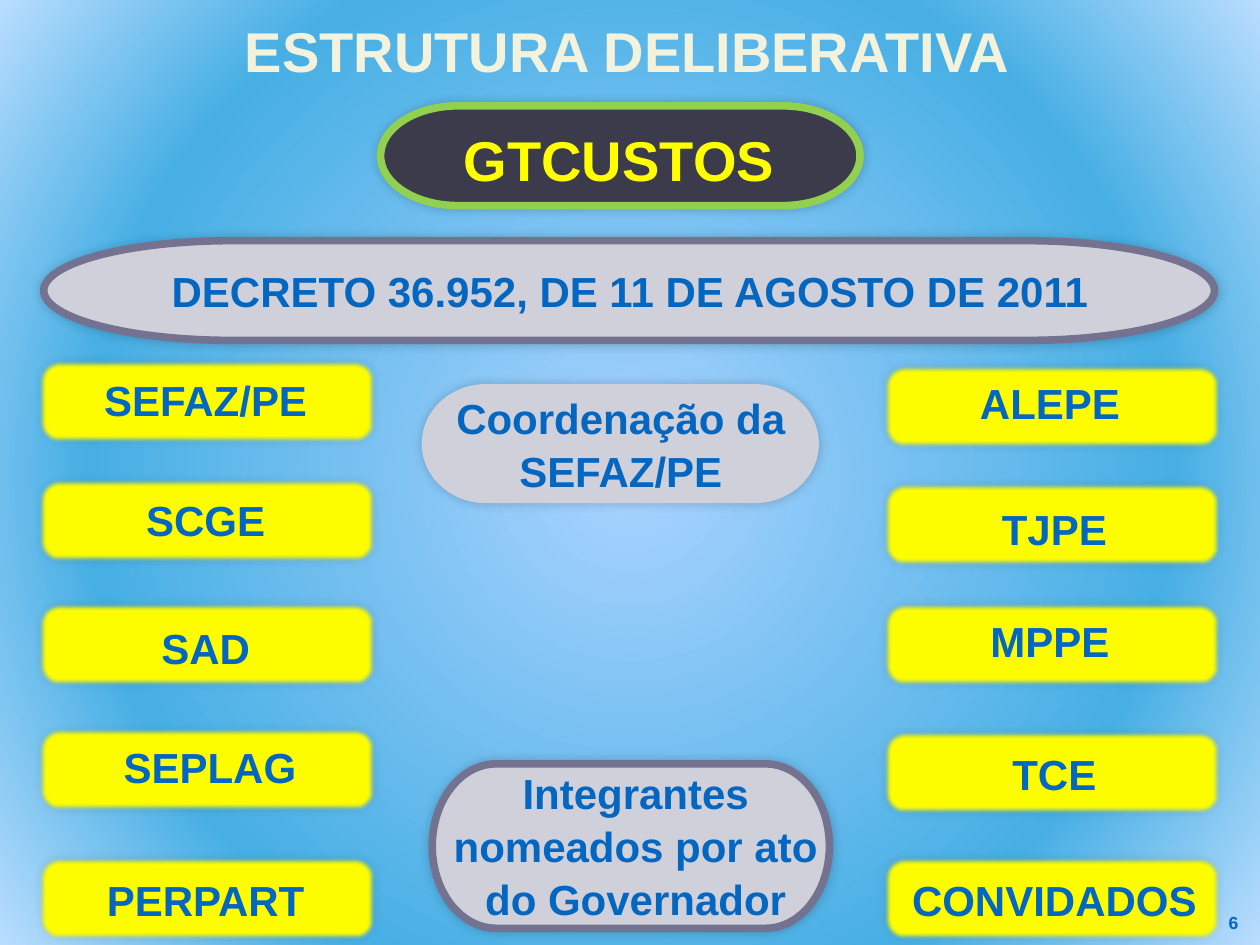
from lxml.etree import SubElement
from pptx import Presentation
from pptx.dml.color import RGBColor
from pptx.enum.shapes import MSO_SHAPE
from pptx.enum.text import MSO_ANCHOR, MSO_AUTO_SIZE, PP_ALIGN
from pptx.oxml import parse_xml
from pptx.oxml.ns import nsdecls, qn
from pptx.util import Pt

CREAM = RGBColor(0xF3, 0xF2, 0xDC)
BLUE = RGBColor(0x03, 0x66, 0xC0)
YELLOW = RGBColor(0xFF, 0xFF, 0x00)
GREY = RGBColor(0xD0, 0xD0, 0xDA)
SLATE = RGBColor(0x73, 0x73, 0x91)
DARK = RGBColor(0x3B, 0x3B, 0x4B)
GREEN = RGBColor(0x92, 0xD0, 0x50)
BLACK = RGBColor(0x00, 0x00, 0x00)
BACKGROUND_STOPS = (
    (0, RGBColor(0xA9, 0xD3, 0xFF)),
    (69, RGBColor(0x47, 0xAF, 0xE4)),
    (100, RGBColor(0xB9, 0xDD, 0xFE)),
)

LEFT_MEMBERS = (
    ("SEFAZ/PE", 208, -1, 1),
    ("SCGE", 276.5, -1, 1),
    ("SAD", 347, -1, 3.5),
    ("SEPLAG", 418.5, 1.5, 0.5),
    ("PERPART", 492, -1, 2.5),
)
RIGHT_MEMBERS = (
    ("ALEPE", 211, -1, 0),
    ("TJPE", 278.5, 1.5, 4.5),
    ("MPPE", 347, -1, 0),
    ("TCE", 420.5, 1.5, 2),
    ("CONVIDADOS", 492, 1.5, 2.5),
)


def paint_background(page):
    """Fill the page with a circular gradient from its centre."""
    stops = "".join(
        f'<a:gs pos="{percent * 1000}"><a:srgbClr val="{color}"/></a:gs>'
        for percent, color in BACKGROUND_STOPS
    )
    fill = page.background.fill
    fill.gradient()
    properties = page.element.find(".//" + qn("p:bgPr"))
    gradient = parse_xml(
        f'<a:gradFill {nsdecls("a")} rotWithShape="1"><a:gsLst>{stops}</a:gsLst>'
        '<a:path path="circle"><a:fillToRect l="50000" t="50000" r="50000" b="50000"/>'
        "</a:path></a:gradFill>"
    )
    properties.replace(properties.find(qn("a:gradFill")), gradient)


def write_text(box, text, size=24, color=BLUE, align=PP_ALIGN.CENTER):
    """Write one bold paragraph at the top of a box."""
    frame = box.text_frame
    frame.word_wrap = True
    frame.auto_size = MSO_AUTO_SIZE.NONE
    frame.vertical_anchor = MSO_ANCHOR.TOP
    frame.margin_left = frame.margin_right = 0
    frame.margin_top = frame.margin_bottom = Pt(3.6)
    para = frame.paragraphs[0]
    para.alignment = align
    para.line_spacing = 1.05
    para.space_before = Pt(0)
    span = para.add_run()
    span.text = text
    span.font.name = "Arial"
    span.font.size = Pt(size)
    span.font.bold = True
    span.font.color.rgb = color


def add_label(page, left, top, width, height, text, **style):
    """Add a text box and write its text."""
    box = page.shapes.add_textbox(Pt(left), Pt(top), Pt(width), Pt(height))
    write_text(box, text, **style)


def add_panel(page, kind, left, top, width, height, fill, line=None, soft=False):
    """Add a filled shape with a faint shadow and optional soft edges."""
    panel = page.shapes.add_shape(kind, Pt(left), Pt(top), Pt(width), Pt(height))
    panel.fill.solid()
    panel.fill.fore_color.rgb = fill
    if line is None:
        panel.line.fill.background()
    else:
        panel.line.color.rgb = line
        panel.line.width = Pt(4.33)
    panel.shadow.inherit = False
    effects = panel.element.spPr.find(qn("a:effectLst"))
    shadow = SubElement(effects, qn("a:outerShdw"), blurRad=str(Pt(6)), dist="0", dir="18900000")
    color = SubElement(shadow, qn("a:srgbClr"), val=str(BLACK))
    SubElement(color, qn("a:alpha"), val="20000")
    if soft:
        SubElement(effects, qn("a:softEdge"), rad=str(Pt(2.5)))


def add_capsule(page, box, label_box, text, fill=GREY, line=SLATE, **style):
    """Place a terminator shape with its label."""
    add_panel(page, MSO_SHAPE.FLOWCHART_TERMINATOR, *box, fill, line)
    add_label(page, *label_box, text, **style)


def add_members(page, left, width, members):
    """Place a column of soft yellow boxes with nudged labels."""
    for name, top, shift, drop in members:
        add_panel(page, MSO_SHAPE.ROUNDED_RECTANGLE, left, top, width, 42.5, YELLOW, YELLOW, soft=True)
        add_label(page, left + shift, top + drop, width, 36, name)


def add_title(page, left, top, width, height, text):
    """Move the title placeholder and write the heading."""
    title = page.shapes.title
    title.left, title.top = Pt(left), Pt(top)
    title.width, title.height = Pt(width), Pt(height)
    write_text(title, text, size=32, color=CREAM)


def main():
    """Build the slide and save the deck."""
    deck = Presentation()
    deck.slide_width, deck.slide_height = Pt(720), Pt(540)
    page = deck.slides.add_slide(deck.slide_layouts[5])
    paint_background(page)
    add_title(page, 85, 4, 547, 40, "ESTRUTURA DELIBERATIVA")
    add_capsule(page, (25, 137.5, 669, 57), (0, 147, 720, 36),
                "DECRETO 36.952, DE 11 DE AGOSTO DE 2011")
    add_capsule(page, (241, 219.5, 227, 68), (238.5, 219.5, 232.5, 65.5),
                "Coordenação da SEFAZ/PE", line=None)
    add_members(page, 25, 187, LEFT_MEMBERS)
    add_members(page, 507.5, 187, RIGHT_MEMBERS)
    add_label(page, 702, 517, 18, 19.5, "6", size=10, align=PP_ALIGN.LEFT)
    add_capsule(page, (247, 436.5, 227, 94), (247, 433.5, 232.5, 94),
                "Integrantes nomeados por ato do Governador")
    add_capsule(page, (217.5, 60.5, 274, 57), (206.5, 66.5, 294.5, 46), "GTCUSTOS",
                fill=DARK, line=GREEN, size=32, color=YELLOW)
    deck.save("out.pptx")


if __name__ == "__main__":
    main()
